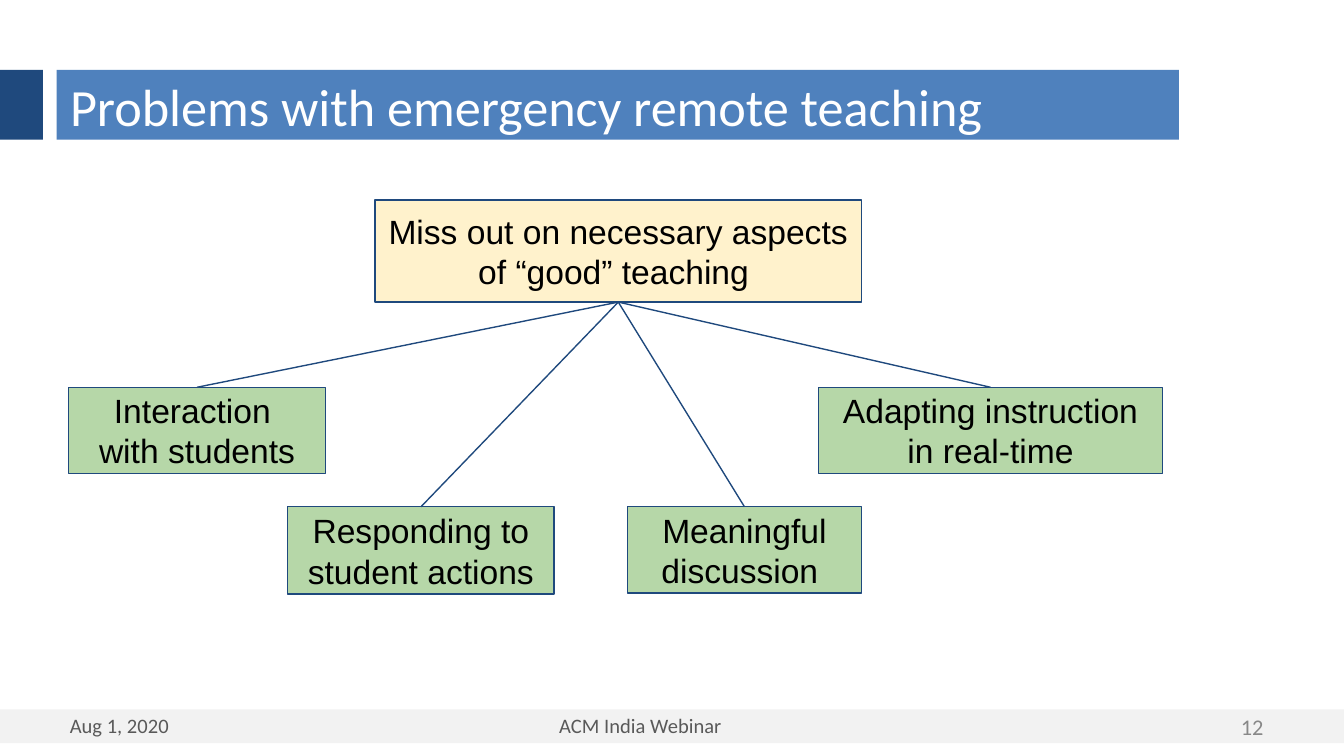
from pptx import Presentation
from pptx.dml.color import RGBColor
from pptx.enum.shapes import MSO_CONNECTOR, MSO_SHAPE
from pptx.enum.text import MSO_ANCHOR, MSO_AUTO_SIZE, PP_ALIGN
from pptx.oxml.ns import qn
from pptx.util import Cm, Pt

NAVY, BLUE, PALE = "1F497D", "4F81BD", "F2F2F2"
GREEN, CREAM = "B6D7A8", "FFF2CC"
BLACK, WHITE, DARK_GREY, GREY = "000000", "FFFFFF", "595959", "888888"

ASPECTS = [
    ("Responding to student actions", 5.44, 9.58, 5.03, 1.65),
    ("Adapting instruction in real-time", 15.47, 7.32, 6.5, 1.63),
    ("Meaningful discussion ", 11.86, 9.58, 4.42, 1.63),
    ("Interaction \nwith students", 1.3, 7.32, 4.85, 1.63),
]


def rgb(value):
    return RGBColor.from_string(value)


def write(sp, text, size, font, color, align=PP_ALIGN.LEFT, anchor=MSO_ANCHOR.MIDDLE):
    tf = sp.text_frame
    tf.text = text
    tf.word_wrap = True
    tf.auto_size = MSO_AUTO_SIZE.NONE
    tf.vertical_anchor = anchor
    for p in tf.paragraphs:
        p.alignment = align
        p.font.size = Pt(size)
        p.font.name = font
        p.font.color.rgb = rgb(color)


def add_box(s, kind, fill, left, top, width, height):
    """Add a filled shape without outline or shadow."""
    sp = s.shapes.add_shape(kind, Cm(left), Cm(top), Cm(width), Cm(height))
    sp.shadow.inherit = False
    sp.fill.solid()
    sp.fill.fore_color.rgb = rgb(fill)
    sp.line.fill.background()
    return sp


def add_label(s, text, size, color, left, width, height, align, anchor=MSO_ANCHOR.TOP):
    """Add one text of the footer row."""
    sp = s.shapes.add_textbox(Cm(left), Cm(13.36), Cm(width), Cm(height))
    write(sp, text, size, "Calibri", color, align, anchor)


def set_title(s, text):
    title = s.shapes.title
    title.left, title.top, title.width, title.height = Cm(1.07), Cm(1.35), Cm(20.75), Cm(1.3)
    write(title, text, 28, "Calibri", WHITE)
    # The title has to lie in front of its bar.
    title.element.getparent().append(title.element)


def add_node(s, fill, text, *place):
    sp = add_box(s, MSO_SHAPE.RECTANGULAR_CALLOUT, fill, *place)
    sp.adjustments[0], sp.adjustments[1] = -0.264, 0.5
    sp.line.color.rgb = rgb(NAVY)
    sp.line.width = Pt(0.75)
    write(sp, text, 18, "Arial", BLACK, PP_ALIGN.CENTER)
    tf = sp.text_frame
    tf.margin_left = tf.margin_right = tf.margin_top = tf.margin_bottom = Cm(0.25)
    return sp


def add_branch(s, parent, child):
    """Join the bottom centre of parent to the top centre of child."""
    line = s.shapes.add_connector(
        MSO_CONNECTOR.STRAIGHT,
        parent.left + parent.width // 2, parent.top + parent.height,
        child.left + child.width // 2, child.top)
    line.line.color.rgb = rgb(NAVY)
    line.line.width = Pt(0.75)
    sp_pr = line.element.spPr
    sp_pr.append(sp_pr.makeelement(qn("a:effectLst"), {}))


def main():
    prs = Presentation()
    prs.slide_width, prs.slide_height = Cm(25.4), Cm(14.29)
    s = prs.slides.add_slide(prs.slide_layouts[5])

    add_box(s, MSO_SHAPE.RECTANGLE, PALE, 0, 13.41, 25.4, 0.64)
    add_label(s, "ACM India Webinar", 11, DARK_GREY, 6.15, 11.91, 0.61, PP_ALIGN.CENTER)
    add_label(s, "Aug 1, 2020", 11, DARK_GREY, 1.07, 3.61, 0.61, PP_ALIGN.LEFT)
    add_box(s, MSO_SHAPE.RECTANGLE, BLUE, 1.07, 1.32, 21.21, 1.32)
    add_box(s, MSO_SHAPE.RECTANGLE, NAVY, 0, 1.32, 0.81, 1.32)
    add_label(s, "12", 12, GREY, 22.56, 1.57, 0.76, PP_ALIGN.RIGHT, MSO_ANCHOR.MIDDLE)
    set_title(s, "Problems with emergency remote teaching")

    aspects = [add_node(s, GREEN, *aspect) for aspect in ASPECTS]
    problem = add_node(s, CREAM, "Miss out on necessary aspects of “good” teaching ",
                       7.09, 3.78, 9.19, 1.93)
    for aspect in sorted(aspects, key=lambda sp: sp.left):
        add_branch(s, problem, aspect)

    prs.save("out.pptx")


if __name__ == "__main__":
    main()
